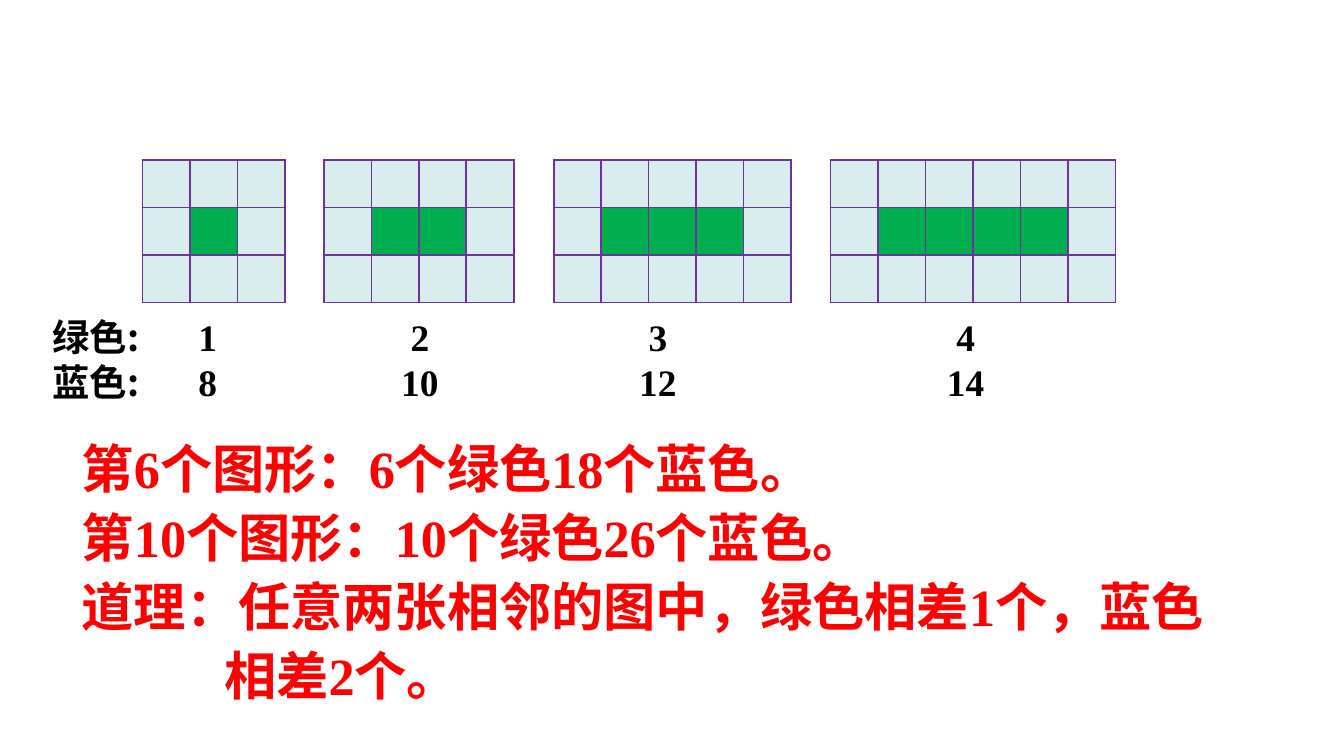
from dataclasses import dataclass

from lxml.etree import SubElement
from pptx import Presentation
from pptx.dml.color import RGBColor
from pptx.enum.lang import MSO_LANGUAGE_ID as Lang
from pptx.enum.text import PP_ALIGN as Align
from pptx.oxml.ns import qn
from pptx.util import Inches, Pt

RED = RGBColor(0xFF, 0x00, 0x00)
BLACK = RGBColor(0x00, 0x00, 0x00)
GREEN = RGBColor(0x00, 0xB0, 0x50)
PALE_BLUE = RGBColor(0xD9, 0xED, 0xEE)
PURPLE = RGBColor(0x70, 0x30, 0xA0)

SERIF = "Times New Roman"
CJK = "Noto Sans CJK SC"

SLIDE_WIDTH = 10
SLIDE_HEIGHT = SLIDE_WIDTH * 9 / 16
GRID_TOP = 1.19
GRID_HEIGHT = 1.06
GRID_ROWS = 3
CELL = GRID_HEIGHT / GRID_ROWS
COUNT_TOP = 2.29
COUNT_HEIGHT = 0.77
COUNT_WIDTH = 0.63


@dataclass
class Figure:
    green: int
    grid_left: float
    count_left: float

    @property
    def columns(self) -> int:
        return self.green + 2

    @property
    def blue(self) -> int:
        return self.columns * GRID_ROWS - self.green


@dataclass
class TextStyle:
    size: int
    color: RGBColor
    font: str = SERIF
    align: Align = Align.LEFT
    line_spacing: float = 1.0


FIGURES = [
    Figure(1, 1.06, 1.23),
    Figure(2, 2.41, 2.81),
    Figure(3, 4.12, 4.58),
    Figure(4, 6.18, 6.87),
]
ANSWER = [
    "第6个图形：6个绿色18个蓝色。",
    "第10个图形：10个绿色26个蓝色。",
    "道理：任意两张相邻的图中，绿色相差1个，蓝色",
    "相差2个。",
]
ANSWER_STYLE = TextStyle(28, RED, line_spacing=1.1)
LABEL_STYLE = TextStyle(20, BLACK, font=CJK)
COUNT_STYLE = TextStyle(20, BLACK, align=Align.CENTER)


def add_text(s, left: float, top: float, width: float, height: float,
             lines: list[str], style: TextStyle):
    box = s.shapes.add_textbox(Inches(left), Inches(top), Inches(width), Inches(height))
    tf = box.text_frame
    tf.word_wrap = True
    tf.text = "\n".join(lines)
    font_format = {"name": style.font, "size": Pt(style.size), "bold": True,
                   "language_id": Lang.SIMPLIFIED_CHINESE}
    for p in tf.paragraphs:
        p.alignment = style.align
        p.line_spacing = style.line_spacing
        r = p.runs[0]
        for name, value in font_format.items():
            setattr(r.font, name, value)
        r.font.color.rgb = style.color
        SubElement(r.font._element, qn("a:ea"), typeface=CJK)
    return tf


def add_borders(cell) -> None:
    tc_pr = cell._tc.get_or_add_tcPr()
    for side in ("lnL", "lnR", "lnT", "lnB"):
        line = SubElement(tc_pr, qn(f"a:{side}"), w=str(Pt(1)))
        fill = SubElement(line, qn("a:solidFill"))
        SubElement(fill, qn("a:srgbClr"), val=str(PURPLE))


def add_grid(s, figure: Figure) -> None:
    table = s.shapes.add_table(
        GRID_ROWS, figure.columns, Inches(figure.grid_left), Inches(GRID_TOP),
        Inches(CELL * figure.columns), Inches(GRID_HEIGHT)).table
    table.first_row = table.horz_banding = False
    for column in table.columns:
        column.width = Inches(CELL)
    for row, table_row in enumerate(table.rows):
        table_row.height = Inches(CELL)
        for col, cell in enumerate(table_row.cells):
            for side in ("left", "right", "top", "bottom"):
                setattr(cell, f"margin_{side}", 0)
            add_borders(cell)
            inside = row == 1 and 0 < col < figure.columns - 1
            cell.fill.solid()
            cell.fill.fore_color.rgb = GREEN if inside else PALE_BLUE


def main() -> None:
    prs = Presentation()
    prs.slide_width, prs.slide_height = Inches(SLIDE_WIDTH), Inches(SLIDE_HEIGHT)
    s = prs.slides.add_slide(prs.slide_layouts[6])

    tf = add_text(s, 0.51, 3.15, 8.98, 2.17, ANSWER, ANSWER_STYLE)
    tf.paragraphs[-1]._p.get_or_add_pPr().set("marL", str(Inches(1.06)))

    add_text(s, 0.29, COUNT_TOP, 1.12, COUNT_HEIGHT, ["绿色:", "蓝色:"], LABEL_STYLE)
    for figure in FIGURES:
        add_text(s, figure.count_left, COUNT_TOP, COUNT_WIDTH, COUNT_HEIGHT,
                 [str(figure.green), str(figure.blue)], COUNT_STYLE)
        add_grid(s, figure)

    prs.save("out.pptx")


if __name__ == "__main__":
    main()
